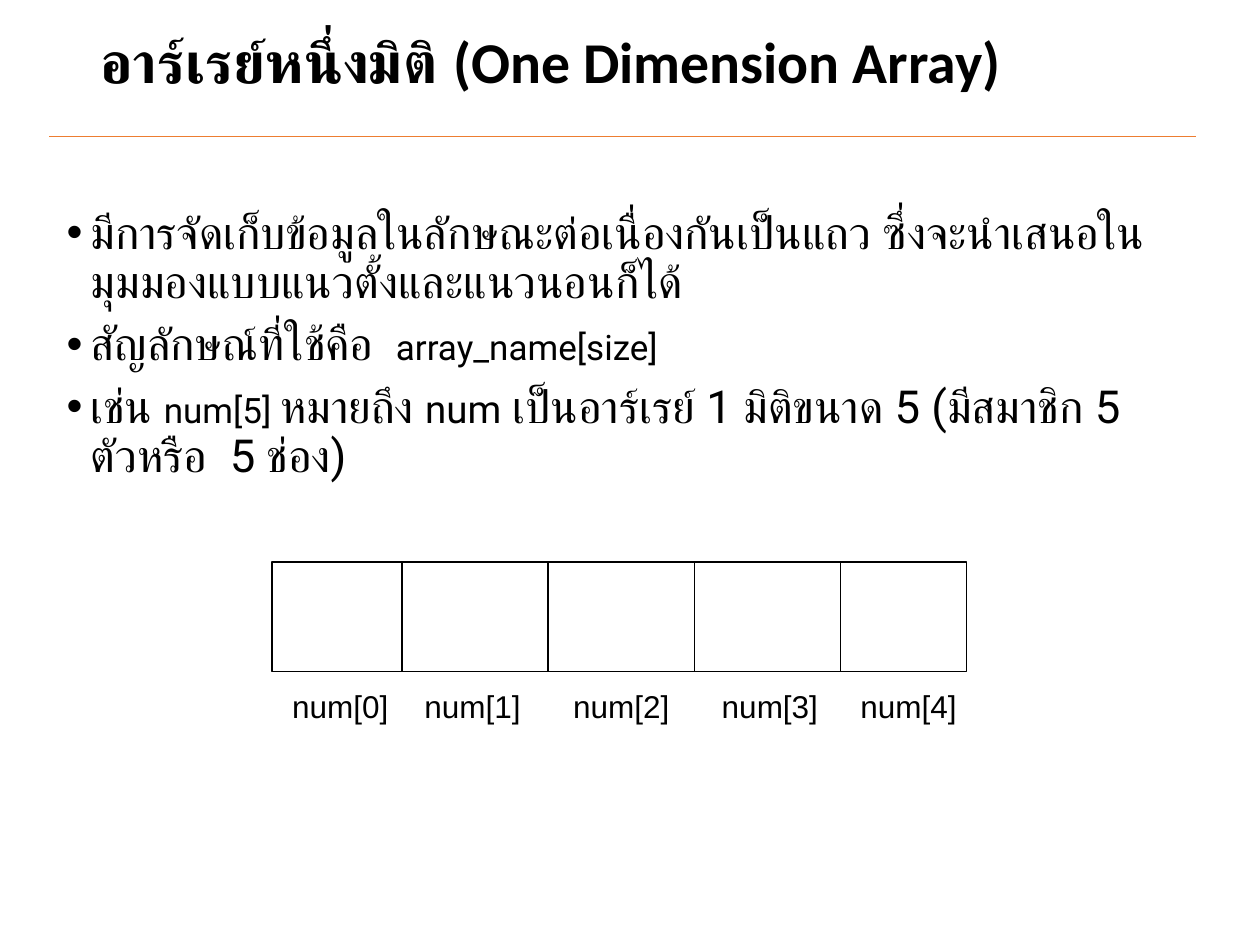
from lxml.etree import SubElement
from pptx import Presentation
from pptx.dml.color import RGBColor as RGB
from pptx.enum.shapes import MSO_CONNECTOR as CONNECTOR, MSO_SHAPE as SHAPE
from pptx.enum.text import MSO_ANCHOR as ANCHOR, MSO_AUTO_SIZE as FIT
from pptx.oxml.ns import qn
from pptx.util import Inches, Pt

THEME = {
    "ink": RGB(0, 0, 0), "accent": RGB(0xED, 0x7D, 0x31),
    "title": ("Calibri", 33), "label": ("Arial", 18), "body": "Roboto",
    "large": 26, "medium": 22, "small": 20,
    "rule": 0.5, "border": 0.75,
}


def style_run(run, font, size, bold=False):
    run.font.name, run.font.size, run.font.bold = font, Pt(size), bold
    run.font.color.rgb = THEME["ink"]


def draw_line(start, end, color, width):
    line = slide.shapes.add_connector(
        CONNECTOR.STRAIGHT, *map(Inches, (*start, *end)))
    line.line.color.rgb = color
    line.line.width = Pt(width)
    SubElement(line._element.spPr, qn("a:effectLst"))


prs = Presentation()
prs.slide_width, prs.slide_height = Inches(10), Inches(7.5)
slide = prs.slides.add_slide(prs.slide_layouts[6])

draw_line((0.39, 1.08), (9.49, 1.08), THEME["accent"], THEME["rule"])

heading = slide.shapes.add_textbox(*map(Inches, (0.7, 0.14, 8.62, 0.75))).text_frame
heading.word_wrap = True
heading.vertical_anchor = ANCHOR.MIDDLE
heading.text = "อาร์เรย์หนึ่งมิติ (One Dimension Array)"
heading.paragraphs[0].line_spacing = 0.9
style_run(heading.paragraphs[0].runs[0], *THEME["title"], bold=True)

points = [
    [("มีการจัดเก็บข้อมูลในลักษณะต่อเนื่องกันเป็นแถว ซึ่งจะนำเสนอในมุมมองแบบแนวตั้งและแนวนอนก็ได้", "large")],
    [("สัญลักษณ์ที่ใช้คือ  ", "large"), ("array_name[size]", "small")],
    [("เช่น ", "large"), ("num[5] ", "small"), ("หมายถึง ", "large"), ("num", "medium"),
     (" เป็นอาร์เรย์ 1 มิติขนาด 5 (มีสมาชิก 5 ตัวหรือ  5 ช่อง)", "large")],
]
body = slide.shapes.add_textbox(*map(Inches, (0.43, 1.62, 9, 2.47))).text_frame
body.word_wrap = True
for index, pieces in enumerate(points):
    point = body.add_paragraph() if index else body.paragraphs[0]
    point.line_spacing, point.space_before = 0.9, Pt(7.5)
    layout = point._p.get_or_add_pPr()
    layout.set("marL", str(Inches(0.19)))
    layout.set("indent", str(Inches(-0.19)))
    SubElement(layout, qn("a:buFont"), typeface="Arial")
    SubElement(layout, qn("a:buChar"), char="•")
    for words, size in pieces:
        run = point.add_run()
        run.text = words
        style_run(run, THEME["body"], THEME[size])

array_left, array_top, array_width, array_height = 2.16, 4.46, 5.51, 0.87
array_box = slide.shapes.add_shape(
    SHAPE.RECTANGLE, *map(Inches, (array_left, array_top, array_width, array_height)))
array_box.shadow.inherit = False
array_box.fill.background()
array_box.line.color.rgb = THEME["ink"]
array_box.line.width = Pt(THEME["border"])

end_cell, inner_cell = 1.03, 1.16
for divider in range(4):
    x = array_left + end_cell + divider * inner_cell
    draw_line((x, array_top), (x, array_top + array_height), THEME["ink"], THEME["border"])

for index, left in enumerate((2.22, 3.27, 4.45, 5.63, 6.73)):
    label = slide.shapes.add_textbox(*map(Inches, (left, 5.4, 0.97, 0.4))).text_frame
    label.word_wrap = False
    label.auto_size = FIT.SHAPE_TO_FIT_TEXT
    label.text = f"num[{index}]"
    style_run(label.paragraphs[0].runs[0], *THEME["label"])

prs.save("out.pptx")
